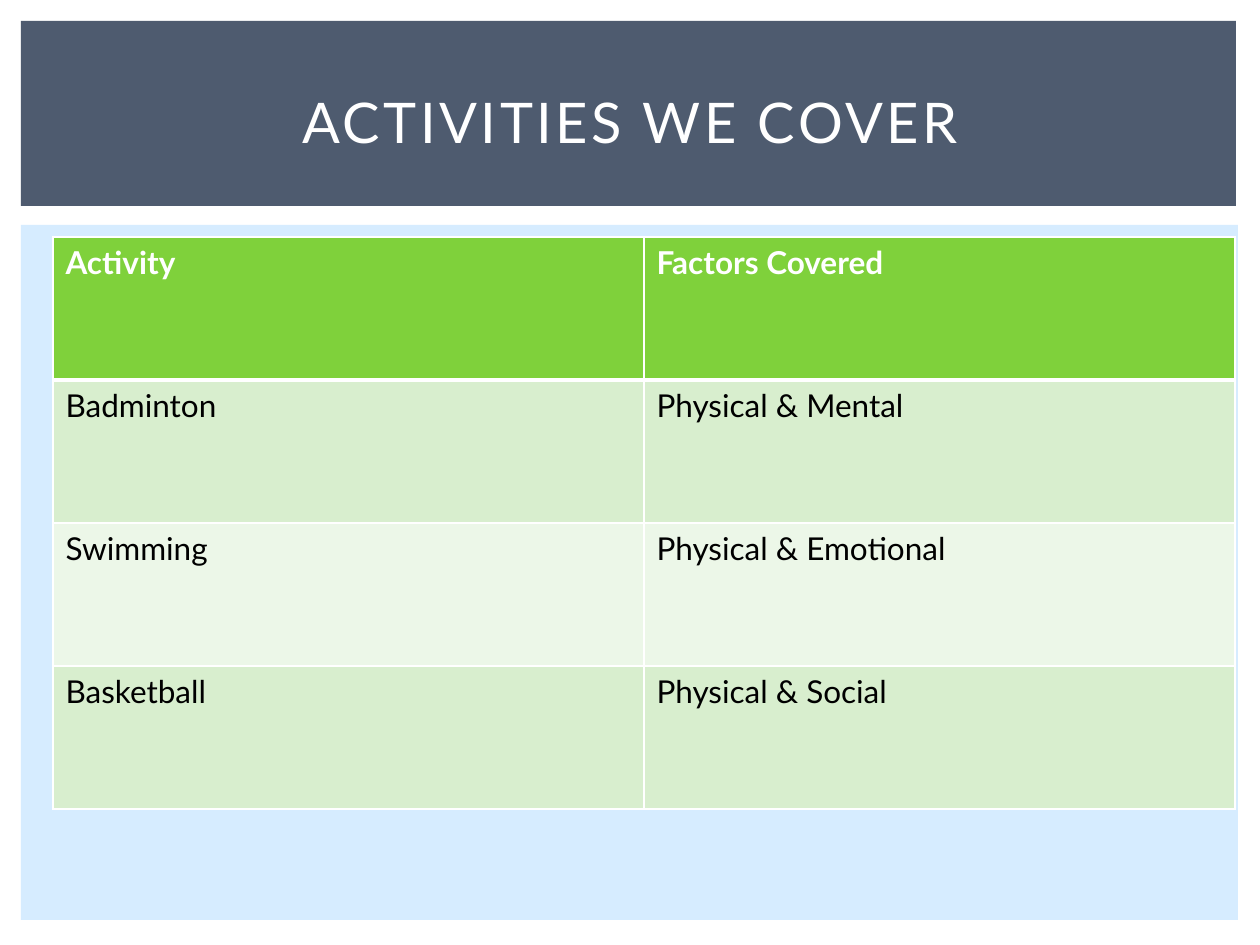
from pptx import Presentation
from pptx.dml.color import RGBColor
from pptx.enum.shapes import MSO_SHAPE
from pptx.enum.text import MSO_ANCHOR, PP_ALIGN
from pptx.oxml import parse_xml
from pptx.oxml.ns import nsdecls
from pptx.util import Emu, Pt

PX_PER_INCH = 126
WHITE, BLACK = "FFFFFF", "000000"
PALE_BLUE, SLATE = "D6ECFF", "4E5B6F"
GREEN, BAND_DARK, BAND_LIGHT = "7FD13B", "D8EECE", "ECF7E8"

ACTIVITIES = [
    ("Activity", "Factors Covered"),
    ("Badminton", "Physical & Mental"),
    ("Swimming", "Physical & Emotional"),
    ("Basketball", "Physical & Social"),
]


def px(length):
    return Emu(round(length * 914400 / PX_PER_INCH))


def color(value):
    return RGBColor.from_string(value)


class SlideBuilder:
    font = "Lato"

    def __init__(self, slide):
        self.slide = slide

    def style_text(self, frame, size, text_color, bold=False):
        for paragraph in frame.paragraphs:
            for run in paragraph.runs:
                run.font.name = self.font
                run.font.size = Pt(size)
                run.font.bold = bold
                run.font.color.rgb = color(text_color)

    def panel(self, left, top, width, height, fill):
        panel = self.slide.shapes.add_shape(
            MSO_SHAPE.RECTANGLE, px(left), px(top), px(width), px(height))
        panel.shadow.inherit = False
        panel.fill.solid()
        panel.fill.fore_color.rgb = color(fill)
        panel.line.fill.background()

    def title(self, text, left, top, width, height, size, spacing):
        heading = self.slide.shapes.title
        heading.left, heading.top = px(left), px(top)
        heading.width, heading.height = px(width), px(height)
        frame = heading.text_frame
        frame.text = text
        frame.word_wrap = True
        frame.vertical_anchor = MSO_ANCHOR.MIDDLE
        frame.paragraphs[0].alignment = PP_ALIGN.CENTER
        self.style_text(frame, size, WHITE)
        for run in frame.paragraphs[0].runs:
            run.font._element.set("spc", str(spacing * 100))
        self.slide.shapes._spTree.append(heading._element)

    def cell_borders(self, cell, widths):
        properties = cell._tc.get_or_add_tcPr()
        for position, (side, width) in enumerate(widths.items()):
            properties.insert(position, parse_xml(
                f'<a:ln{side} {nsdecls("a")} w="{Pt(width)}"><a:solidFill>'
                f'<a:srgbClr val="{WHITE}"/></a:solidFill></a:ln{side}>'))

    def table(self, rows, left, top, column_width, row_height, size):
        column_count = len(rows[0])
        table = self.slide.shapes.add_table(
            len(rows), column_count, px(left), px(top),
            px(column_width * column_count), px(row_height * len(rows))).table
        for column in table.columns:
            column.width = px(column_width)
        for row_index, row in enumerate(rows):
            table.rows[row_index].height = px(row_height)
            is_header = row_index == 0
            band = BAND_DARK if row_index % 2 else BAND_LIGHT
            borders = {"L": 1, "R": 1, "T": 3 if row_index == 1 else 1,
                       "B": 3 if is_header else 1}
            for column_index, text in enumerate(row):
                cell = table.cell(row_index, column_index)
                cell.text_frame.text = text
                cell.fill.solid()
                cell.fill.fore_color.rgb = color(GREEN if is_header else band)
                self.cell_borders(cell, borders)
                self.style_text(cell.text_frame, size,
                                WHITE if is_header else BLACK, is_header)


def main():
    presentation = Presentation()
    presentation.slide_width, presentation.slide_height = px(1260), px(945)
    slide = presentation.slides.add_slide(presentation.slide_layouts[5])
    builder = SlideBuilder(slide)
    builder.panel(21, 225, 1217, 695, PALE_BLUE)
    builder.panel(21, 21, 1215, 185, SLATE)
    builder.table(ACTIVITIES, 53, 237, 591, 143, 18)
    builder.title("ACTIVITIES WE COVER", 53, 49, 1155, 145, 32, 2)
    presentation.save("out.pptx")


if __name__ == "__main__":
    main()
